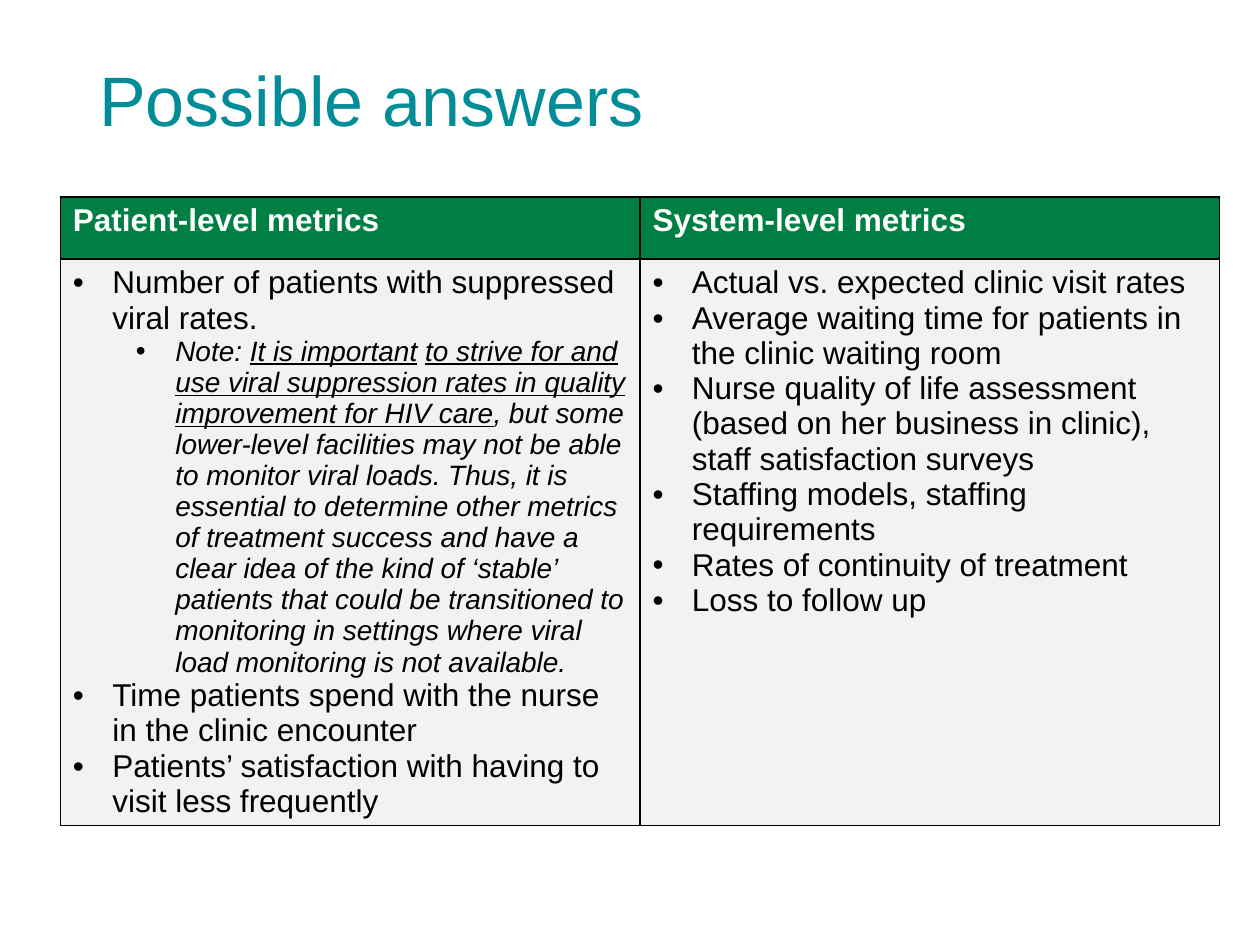
from dataclasses import dataclass

from lxml.etree import SubElement
from pptx import Presentation
from pptx.dml.color import RGBColor
from pptx.enum.text import MSO_ANCHOR, PP_ALIGN
from pptx.oxml.ns import qn
from pptx.table import _Cell as Cell
from pptx.text.text import _Paragraph as Paragraph
from pptx.util import Pt

TEAL = RGBColor(0x00, 0x8D, 0x98)
GREEN = RGBColor(0x00, 0x7F, 0x44)
PALE_GREY = RGBColor(0xF2, 0xF2, 0xF2)
WHITE = RGBColor(0xFF, 0xFF, 0xFF)
BLACK = RGBColor(0x00, 0x00, 0x00)
FONT = "Arial"
HANGING = Pt(22.5)
LEVEL_STEP = Pt(36)


@dataclass(frozen=True)
class Phrase:
    text: str
    underlined: bool = False


@dataclass(frozen=True)
class Bullet:
    phrases: tuple[Phrase, ...]
    level: int = 0


@dataclass(frozen=True)
class MetricGroup:
    heading: str
    bullets: tuple[Bullet, ...]


def plain(text: str) -> Bullet:
    return Bullet((Phrase(text),))


NOTE = Bullet(
    (
        Phrase("Note: "),
        Phrase("It is important", True),
        Phrase(" "),
        Phrase(
            "to strive for and use viral suppression rates in quality "
            "improvement for HIV care",
            True,
        ),
        Phrase(
            ", but some lower-level facilities may not be able to monitor viral "
            "loads. Thus, it is essential to determine other metrics of treatment "
            "success and have a clear idea of the kind of ‘stable’ patients that "
            "could be transitioned to monitoring in settings where viral load "
            "monitoring is not available."
        ),
    ),
    level=1,
)

GROUPS = (
    MetricGroup(
        "Patient-level metrics",
        (
            plain("Number of patients with suppressed viral rates."),
            NOTE,
            plain("Time patients spend with the nurse in the clinic encounter"),
            plain("Patients’ satisfaction with having to visit less frequently"),
        ),
    ),
    MetricGroup(
        "System-level metrics",
        (
            plain("Actual vs. expected clinic visit rates"),
            plain("Average waiting time for patients in the clinic waiting room"),
            plain(
                "Nurse quality of life assessment (based on her business in "
                "clinic), staff satisfaction surveys"
            ),
            plain("Staffing models, staffing requirements"),
            plain("Rates of continuity of treatment"),
            plain("Loss to follow up"),
        ),
    ),
)


def set_font(
    paragraph: Paragraph,
    size: float,
    color: RGBColor,
    bold: bool = False,
    italic: bool = False,
) -> None:
    font = paragraph.font
    font.name = FONT
    font.size = Pt(size)
    font.bold = bold
    font.italic = italic
    font.color.rgb = color


def style_cell(cell: Cell, fill: RGBColor) -> None:
    properties = cell._tc.get_or_add_tcPr()
    for side in ("L", "R", "T", "B"):
        border = SubElement(properties, qn(f"a:ln{side}"), w=str(Pt(1)))
        border_fill = SubElement(border, qn("a:solidFill"))
        SubElement(border_fill, qn("a:srgbClr"), val=str(BLACK))
    cell.fill.solid()
    cell.fill.fore_color.rgb = fill


def write_bullet(paragraph: Paragraph, bullet: Bullet) -> None:
    paragraph.level = bullet.level
    properties = paragraph._p.get_or_add_pPr()
    properties.set("marL", str(HANGING + bullet.level * LEVEL_STEP))
    properties.set("indent", str(-HANGING))
    SubElement(properties, qn("a:buFont"), typeface=FONT)
    SubElement(properties, qn("a:buChar"), char="•")
    nested = bullet.level > 0
    set_font(paragraph, 16 if nested else 18, BLACK, italic=nested)
    for phrase in bullet.phrases:
        run = paragraph.add_run()
        run.text = phrase.text
        if phrase.underlined:
            run.font.underline = True


def fill_column(heading_cell: Cell, list_cell: Cell, group: MetricGroup) -> None:
    style_cell(heading_cell, GREEN)
    heading_cell.text = group.heading
    set_font(heading_cell.text_frame.paragraphs[0], 18, WHITE, bold=True)

    style_cell(list_cell, PALE_GREY)
    frame = list_cell.text_frame
    for index, bullet in enumerate(group.bullets):
        paragraph = frame.add_paragraph() if index else frame.paragraphs[0]
        write_bullet(paragraph, bullet)


def main() -> None:
    presentation = Presentation()
    presentation.slide_width, presentation.slide_height = Pt(720), Pt(540)
    slide = presentation.slides.add_slide(presentation.slide_layouts[5])

    title = slide.shapes.title
    title.left, title.top = Pt(49.5), Pt(28.8)
    title.width, title.height = Pt(621), Pt(60.5)
    title.text_frame.text = "Possible answers"
    title.text_frame.vertical_anchor = MSO_ANCHOR.MIDDLE
    title_line = title.text_frame.paragraphs[0]
    title_line.alignment = PP_ALIGN.LEFT
    title_line.line_spacing = 0.9
    set_font(title_line, 40, TEAL)

    metrics = slide.shapes.add_table(
        2, len(GROUPS), Pt(34.5), Pt(112.5), Pt(662.4), Pt(359)
    ).table
    metrics.rows[0].height = Pt(35.5)
    metrics.rows[1].height = Pt(323.5)
    for column, group in enumerate(GROUPS):
        fill_column(metrics.cell(0, column), metrics.cell(1, column), group)

    presentation.save("out.pptx")


if __name__ == "__main__":
    main()
